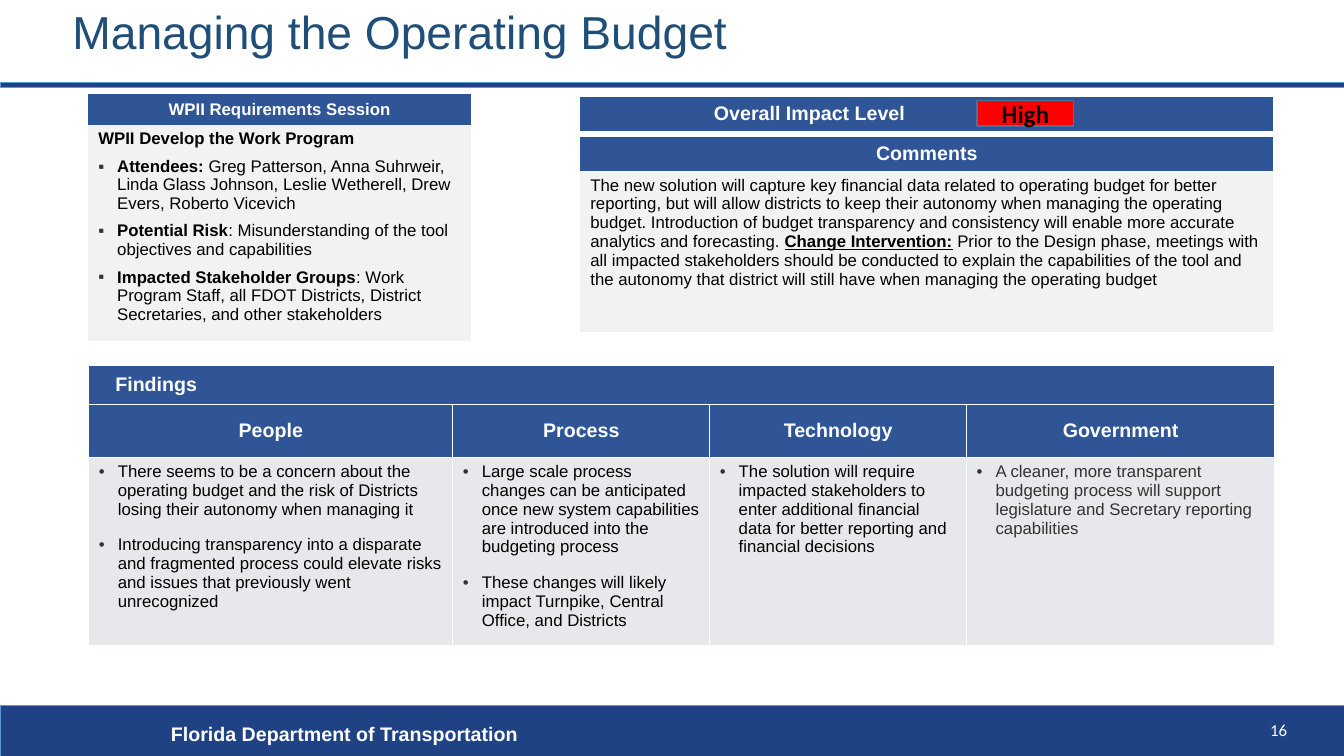
from lxml import etree
from pptx import Presentation
from pptx import util as u
from pptx.dml.color import RGBColor
from pptx.enum import shapes, text
from pptx.oxml import ns

COLORS = {
    "navy": "1F4284", "edge": "5B9BD5", "title": "1F4E79", "header": "2F5597",
    "panel": "F2F2F2", "findings": "E7E8EB", "white": "FFFFFF", "black": "000000",
    "bullet": "333333", "alert": "FF0000", "alert_edge": "43739E",
}
BOLD = {"bold": True}
UNDERLINED = {"bold": True, "underline": True}
NO_GRID = "{2D5ABB26-0587-4C30-8999-92F81FD0307C}"
MIDDLE = text.MSO_ANCHOR.MIDDLE
LEFT, CENTER, RIGHT = text.PP_ALIGN.LEFT, text.PP_ALIGN.CENTER, text.PP_ALIGN.RIGHT


def rgb(name):
    return RGBColor.from_string(COLORS[name])


def add_xml(parent, tag, **attributes):
    return etree.SubElement(parent, ns.qn(tag), attributes)


class BudgetSlide:
    """Holds the style and the current slide."""

    def __init__(self, deck):
        self.slide = deck.slides.add_slide(deck.slide_layouts[5])
        self.base = {"name": "Arial", "size": u.Pt(12), "bold": False}

    def add_runs(self, paragraph, runs, color="black", **style):
        """Fill a paragraph with (wording, format) pairs."""
        for wording, extra in runs:
            run = paragraph.add_run()
            run.text = wording
            for key, value in {**self.base, **style, **extra}.items():
                setattr(run.font, key, value)
            run.font.color.rgb = rgb(color)

    def bullet(self, paragraph, mark):
        properties = paragraph._p.get_or_add_pPr()
        properties.set("marL", str(u.Pt(13.5)))
        properties.set("indent", str(u.Pt(-13.5)))
        add_xml(add_xml(properties, "a:buClr"), "a:srgbClr", val=COLORS["bullet"])
        add_xml(properties, "a:buFont", typeface="Arial")
        add_xml(properties, "a:buChar", char=mark)

    def title(self, wording, box):
        title = self.slide.shapes.title
        for side, value in zip(("left", "top", "width", "height"), box):
            setattr(title, side, u.Pt(value))
        title.text_frame.vertical_anchor = MIDDLE
        paragraph = title.text_frame.paragraphs[0]
        paragraph.alignment = LEFT
        paragraph.line_spacing = 0.9
        self.add_runs(paragraph, [(wording, {})], "title", size=u.Pt(33))

    def rectangle(self, box, fill, edge, weight):
        shape = self.slide.shapes.add_shape(shapes.MSO_SHAPE.RECTANGLE, *map(u.Pt, box))
        shape.shadow.inherit = False
        shape.fill.solid()
        shape.fill.fore_color.rgb = rgb(fill)
        shape.line.color.rgb = rgb(edge)
        shape.line.width = u.Pt(weight)
        return shape

    def badge(self, wording, box):
        shape = self.rectangle(box, "alert", "alert_edge", 1)
        shape.text_frame.vertical_anchor = MIDDLE
        paragraph = shape.text_frame.paragraphs[0]
        paragraph.alignment = CENTER
        self.add_runs(paragraph, [(wording, BOLD)], name="Calibri", size=u.Pt(18))

    def label(self, wording, box, align=LEFT, **style):
        frame = self.slide.shapes.add_textbox(*map(u.Pt, box)).text_frame
        frame.word_wrap = True
        paragraph = frame.paragraphs[0]
        paragraph.alignment = align
        self.add_runs(paragraph, [(wording, {})], "white", **style)

    def table(self, left, top, widths, heights, grid=False):
        frame = self.slide.shapes.add_table(
            len(heights), len(widths), u.Pt(left), u.Pt(top),
            u.Pt(sum(widths)), u.Pt(sum(heights)))
        table = frame.table
        table._tbl.tblPr.find(ns.qn("a:tableStyleId")).text = NO_GRID
        table.first_row = table.horz_banding = False
        for column, width in zip(table.columns, widths):
            column.width = u.Pt(width)
        for row, height in zip(table.rows, heights):
            row.height = u.Pt(height)
        if grid:
            for cell in table.iter_cells():
                self.borders(cell)
        return table

    def borders(self, cell):
        properties = cell._tc.get_or_add_tcPr()
        for side in ("a:lnL", "a:lnR", "a:lnT", "a:lnB"):
            line = add_xml(properties, side, w=str(u.Pt(1)))
            add_xml(add_xml(line, "a:solidFill"), "a:srgbClr", val=COLORS["white"])

    def fill_cell(self, cell, fill):
        cell.fill.solid()
        cell.fill.fore_color.rgb = rgb(fill)

    def header(self, cell, wording, size=14, align=CENTER):
        self.fill_cell(cell, "header")
        cell.vertical_anchor = MIDDLE
        paragraph = cell.text_frame.paragraphs[0]
        paragraph.alignment = align
        self.add_runs(paragraph, [(wording, BOLD)], "white", size=u.Pt(size))
        return paragraph

    def body(self, cell, paragraphs, fill, mark=None, plain=0, before=0, after=6, color="black"):
        """Add paragraphs; those after the first `plain` ones get the mark."""
        self.fill_cell(cell, fill)
        frame = cell.text_frame
        for index, runs in enumerate(paragraphs):
            paragraph = frame.add_paragraph() if index else frame.paragraphs[0]
            if index:
                paragraph.space_before = u.Pt(before)
            paragraph.space_after = u.Pt(after)
            if mark and index >= plain:
                self.bullet(paragraph, mark)
            self.add_runs(paragraph, runs, color)


# Content
SESSION = [
    [("WPII Develop the Work Program", BOLD)],
    [("Attendees: ", BOLD),
     ("Greg Patterson, Anna Suhrweir, Linda Glass Johnson, Leslie Wetherell, "
      "Drew Evers, Roberto Vicevich", {})],
    [("Potential Risk", BOLD), (": Misunderstanding of the tool objectives and capabilities", {})],
    [("Impacted Stakeholder Groups", BOLD),
     (": Work Program Staff, all FDOT Districts, District Secretaries, and other stakeholders", {})],
]
COMMENTS = [[
    ("The new solution will capture key financial data related to operating budget for better "
     "reporting, but will allow districts to keep their autonomy when managing the operating "
     "budget. Introduction of budget transparency and consistency will enable more accurate "
     "analytics and forecasting. ", {}),
    ("Change Intervention:", UNDERLINED),
    (" Prior to the Design phase, meetings with all impacted stakeholders should be conducted "
     "to explain the capabilities of the tool and the autonomy that district will still have "
     "when managing the operating budget", {}),
]]
FINDINGS = {
    "People": (260, "black", [
        "There seems to be a concern about the operating budget and the risk of Districts "
        "losing their autonomy when managing it",
        "Introducing transparency into a disparate and fragmented process could elevate risks "
        "and issues that previously went unrecognized"]),
    "Process": (183.5, "black", [
        "Large scale process changes can be anticipated once new system capabilities are "
        "introduced into the budgeting process",
        "These changes will likely impact Turnpike, Central Office, and Districts"]),
    "Technology": (183.5, "black", [
        "The solution will require impacted stakeholders to enter additional financial data "
        "for better reporting and financial decisions"]),
    "Government": (220, "bullet", [
        "A cleaner, more transparent budgeting process will support legislature and Secretary "
        "reporting capabilities"]),
}


def main():
    deck = Presentation()
    deck.slide_width, deck.slide_height = u.Pt(960), u.Pt(540)
    page = BudgetSlide(deck)

    # Footer band, rule and title
    page.rectangle((0, 504, 960, 36), "navy", "edge", 0.5)
    page.label("Florida Department of Transportation", (115, 512, 574.5, 24.5),
               size=u.Pt(14), bold=True)
    page.rectangle((0, 59, 960, 3.5), "navy", "edge", 0.5)
    page.label("16", (845.5, 510.5, 81, 21.5), RIGHT, name="Calibri")
    page.title("Managing the Operating Budget", (44.5, -1.5, 747.5, 52))

    # Findings
    widths = [width for width, _, _ in FINDINGS.values()]
    findings = page.table(63.5, 260.7, widths, (28, 38, 126.5), grid=True)
    findings.cell(0, 0).merge(findings.cell(0, len(widths) - 1))
    heading = page.header(findings.cell(0, 0), "Findings", align=LEFT)
    heading._p.get_or_add_pPr().set("marL", str(u.Pt(11.7)))
    for column, (area, (_, color, points)) in enumerate(FINDINGS.items()):
        page.header(findings.cell(1, column), area)
        page.body(findings.cell(2, column), [[(point, {})] for point in points],
                  "findings", "•", before=4, after=8, color=color)

    # Requirements session
    session = page.table(63, 67, (273.5,), (22, 146))
    page.header(session.cell(0, 0), "WPII Requirements Session", size=12)
    page.body(session.cell(1, 0), SESSION, "panel", "▪", plain=1)

    # Comments
    comments = page.table(414.5, 98, (495,), (23, 115))
    page.header(comments.cell(0, 0), "Comments")
    page.body(comments.cell(1, 0), COMMENTS, "panel")

    # Overall impact
    impact = page.table(414.5, 69.3, (327.5, 167.5), (23,))
    page.header(impact.cell(0, 0), "Overall Impact Level")
    badge_cell = impact.cell(0, 1)
    badge_cell.margin_top = badge_cell.margin_bottom = 0
    page.fill_cell(badge_cell, "header")
    page.badge("High", (698, 72, 69, 18))

    deck.save("out.pptx")


if __name__ == "__main__":
    main()
